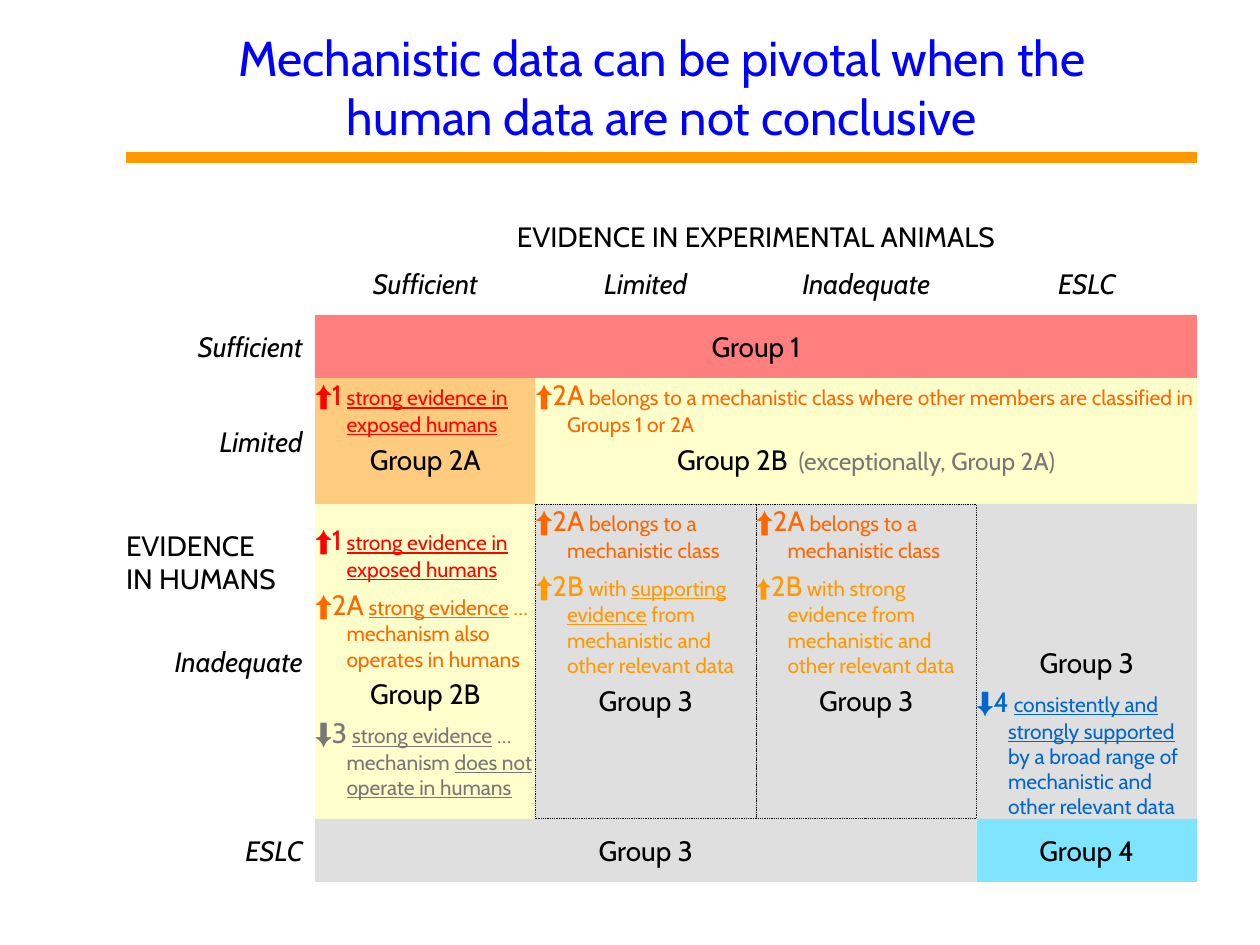
from lxml.etree import SubElement
from pptx import Presentation
from pptx.dml.color import RGBColor
from pptx.enum.dml import MSO_LINE
from pptx.enum.shapes import MSO_CONNECTOR, MSO_SHAPE
from pptx.enum.text import MSO_ANCHOR, PP_ALIGN
from pptx.oxml.ns import qn
from pptx.util import Inches, Pt

UNIT = 0.25
LEFT, COL = 10, 7
HEADS = ["Sufficient", "Limited", "Inadequate", "ESLC"]
BANDS = [(10, 2), (12, 4), (16, 10), (26, 2)]
RED, ORANGE, AMBER, GRAY, BLUE = "FF0000", "FF6600", "FF9900", "777777", "0066CC"
YELLOW, SILVER, CYAN = "FFFF99", "C0C0C0", "00CCFF"
TOP, MIDDLE, BOTTOM = MSO_ANCHOR.TOP, MSO_ANCHOR.MIDDLE, MSO_ANCHOR.BOTTOM


def rgb(value):
    """Turn a hex string into a colour."""
    return RGBColor.from_string(value)


def group(name, note=""):
    """Describe a centred group name with an optional grey note."""
    runs = [(name, 16, "000000", "")]
    if note:
        runs.append((note, 14, GRAY, ""))
    return PP_ALIGN.CENTER, runs


def move(mark, color, *pieces, arrow=16):
    """Describe a hanging criterion whose pieces alternate plain and underlined."""
    runs = [(mark[0], arrow, color, ""), (mark[1:], 16, color, "")]
    runs += [(t, 12, color, "u" if i % 2 else "") for i, t in enumerate(pieces)]
    return None, runs


class Deck:
    """Hold the style and the current slide."""

    font = "Cabin"

    def __init__(self):
        """Start a presentation with one blank slide."""
        self.prs = Presentation()
        self.prs.slide_width, self.prs.slide_height = Inches(10), Inches(7.5)
        self.s = self.prs.slides.add_slide(self.prs.slide_layouts[6])

    def box(self, *cells):
        """Convert grid units to lengths."""
        return [Inches(c * UNIT) for c in cells]

    def add_text(self, sp, paras, anchor, inset=(0, 0), spaced=True):
        """Fill a shape with paragraphs, run by run."""
        tf = sp.text_frame
        tf.word_wrap, tf.vertical_anchor = True, anchor
        tf.margin_left = tf.margin_top = 0
        tf.margin_right, tf.margin_bottom = map(Inches, inset)
        for i, (align, runs) in enumerate(paras):
            p = tf.add_paragraph() if i else tf.paragraphs[0]
            p.alignment = align or PP_ALIGN.LEFT
            pPr = p._p.get_or_add_pPr()
            if align is None:
                pPr.set("marL", str(Inches(UNIT)))
                pPr.set("indent", str(-Inches(UNIT)))
            for tag in ("a:spcBef", "a:spcAft") if spaced else ():
                SubElement(SubElement(pPr, qn(tag)), qn("a:spcPct"), val="10000")
            for text, size, color, style in runs:
                r = p.add_run()
                r.text = text
                r.font.name, r.font.size = self.font, Pt(size)
                r.font.color.rgb = rgb(color)
                r.font.italic, r.font.underline = "i" in style, "u" in style

    def label(self, cells, text, align=PP_ALIGN.CENTER, anchor=MIDDLE, size=16,
              color="000000", style="", inset=(0, 0), spaced=True):
        """Add a one-paragraph text box."""
        sp = self.s.shapes.add_textbox(*self.box(*cells))
        self.add_text(sp, [(align, [(text, size, color, style)])], anchor, inset, spaced)

    def cell(self, col, row, span, fill, *paras, anchor=MIDDLE, dotted=False):
        """Add a half-transparent matrix cell."""
        top, height = BANDS[row]
        cells = self.box(LEFT + col * COL, top, span * COL, height)
        sp = self.s.shapes.add_shape(MSO_SHAPE.RECTANGLE, *cells)
        sp.shadow.inherit = False
        sp.fill.solid()
        sp.fill.fore_color.rgb = rgb(fill)
        clr = sp._element.spPr.find(".//" + qn("a:srgbClr"))
        SubElement(clr, qn("a:alpha"), val="50000")
        if dotted:
            sp.line.color.rgb, sp.line.width = rgb("000000"), Pt(0.5)
            sp.line.dash_style = MSO_LINE.ROUND_DOT
        else:
            sp.line.fill.background()
        self.add_text(sp, paras, anchor)

    def rule(self, x1, y1, x2, y2, color, width):
        """Add a straight line."""
        ends = self.box(x1, y1, x2, y2)
        ln = self.s.shapes.add_connector(MSO_CONNECTOR.STRAIGHT, *ends)
        ln.line.color.rgb, ln.line.width = rgb(color), Pt(width)
        SubElement(ln._element.spPr, qn("a:effectLst"))


def main():
    """Build the slide."""
    d = Deck()
    d.rule(4, 5, 38, 5, AMBER, 6)
    d.label((6, 1, 30, 4),
            "Mechanistic data can be pivotal when the human data are not conclusive",
            anchor=BOTTOM, size=28, color="0000FF", inset=(0, 0.1), spaced=False)
    d.label((LEFT, 7, 4 * COL, 1), "EVIDENCE IN EXPERIMENTAL ANIMALS")
    d.label((4, 10, 5, 18), "EVIDENCE IN HUMANS", PP_ALIGN.LEFT, inset=(0, 0.58))
    for i, (head, (top, height)) in enumerate(zip(HEADS, BANDS)):
        d.label((LEFT + i * COL, 8, COL, 2), head, style="i")
        d.label((5, top, 5, height), head, PP_ALIGN.RIGHT, style="i", inset=(0.1, 0))

    exposed = move("⬆1", RED, " ", "strong evidence in exposed humans")
    belongs = move("⬆2A", ORANGE, " belongs to a mechanistic class")
    d.cell(0, 0, 4, RED, group("Group 1"))
    d.cell(0, 1, 1, AMBER, exposed, group("Group 2A"), anchor=TOP)
    d.cell(1, 1, 3, YELLOW,
           move("⬆2A", ORANGE, " belongs to a mechanistic class where other members"
                " are classified in Groups 1 or 2A"),
           group("Group 2B", "  (exceptionally, Group 2A)"), anchor=TOP)
    d.cell(0, 2, 1, YELLOW, exposed,
           move("⬆2A", ORANGE, " ", "strong evidence",
                " … mechanism also operates in humans"),
           group("Group 2B"),
           move("⬇3", GRAY, " ", "strong evidence", " … mechanism ",
                "does not operate in humans"))
    d.cell(1, 2, 1, SILVER, belongs,
           move("⬆2B", AMBER, " with ", "supporting evidence",
                " from mechanistic and other relevant data"),
           group("Group 3"), anchor=TOP, dotted=True)
    d.cell(2, 2, 1, SILVER, belongs,
           move("⬆2B", AMBER, " with strong evidence from mechanistic and other"
                " relevant data", arrow=14),
           group("Group 3"), anchor=TOP, dotted=True)
    d.cell(3, 2, 1, SILVER, group("Group 3"),
           move("⬇4", BLUE, " ", "consistently and strongly supported",
                " by a broad range of mechanistic and other relevant data"),
           anchor=BOTTOM)
    d.cell(0, 3, 3, SILVER, group("Group 3"))
    d.cell(3, 3, 1, CYAN, group("Group 4"))
    d.prs.save("out.pptx")


if __name__ == "__main__":
    main()
